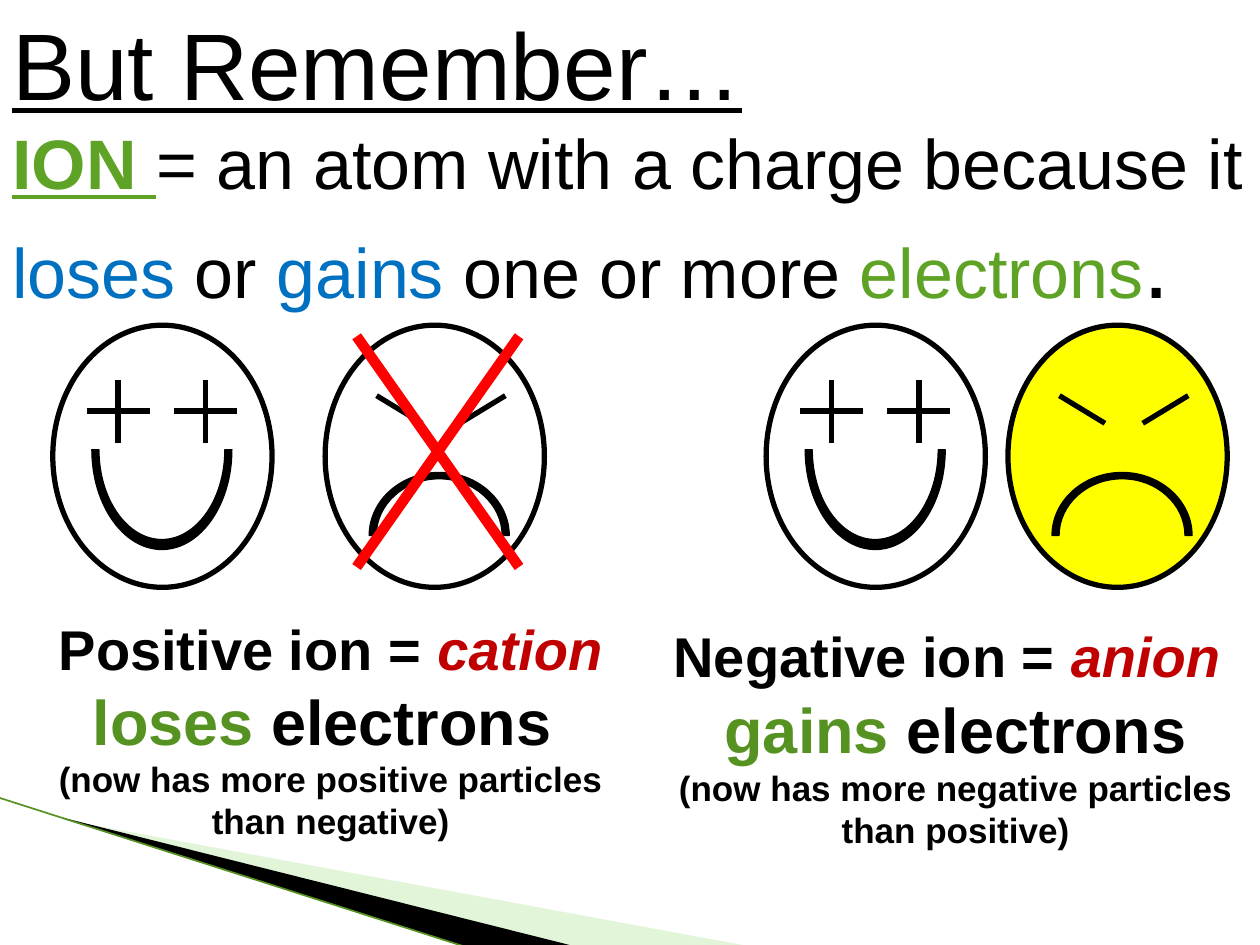
import lxml.etree
import pptx
import pptx.dml.color
import pptx.enum.shapes
import pptx.enum.text
import pptx.oxml.ns
import pptx.util

Pt = pptx.util.Pt
RGBColor = pptx.dml.color.RGBColor
qn = pptx.oxml.ns.qn

BLACK = RGBColor(0x00, 0x00, 0x00)
WHITE = RGBColor(0xFF, 0xFF, 0xFF)
YELLOW = RGBColor(0xFF, 0xFF, 0x00)
RED = RGBColor(0xFF, 0x00, 0x00)
DARK_RED = RGBColor(0xC0, 0x00, 0x00)
BLUE = RGBColor(0x00, 0x70, 0xC0)
GREEN = RGBColor(0x5F, 0xA3, 0x26)
DARK_GREEN = RGBColor(0x55, 0x92, 0x22)
PALE_GREEN = RGBColor(0xB8, 0xE7, 0xA1)

FACE_TOP, FACE_WIDTH, FACE_HEIGHT = 185.8, 125.3, 149.8
BEZIER = 0.55  # control point distance for a quarter ellipse


def add_line(shapes, start, end, color, width):
    line = shapes.add_connector(
        pptx.enum.shapes.MSO_CONNECTOR.STRAIGHT, *map(Pt, start + end))
    line.line.color.rgb = color
    line.line.width = Pt(width)
    lxml.etree.SubElement(line._element.spPr, qn("a:effectLst"))


def add_polygon(shapes, frame, points, color):
    """Fill an outline whose shape frame may differ from the outline's extent."""
    points = [tuple(map(Pt, point)) for point in points]
    builder = shapes.build_freeform(*points[0], scale=1.0)
    builder.add_line_segments(points[1:], close=True)
    polygon = builder.convert_to_shape()
    polygon.shadow.inherit = False
    polygon.fill.solid()
    polygon.fill.fore_color.rgb = color
    polygon.line.fill.background()

    left, top, width, height = map(Pt, frame)
    outline = polygon._element.spPr.find(".//" + qn("a:path"))
    for point in outline.iter(qn("a:pt")):
        point.set("x", str(int(point.get("x")) + polygon.left - left))
        point.set("y", str(int(point.get("y")) + polygon.top - top))
    outline.set("w", str(width))
    outline.set("h", str(height))
    polygon.left, polygon.top = left, top
    polygon.width, polygon.height = width, height
    return polygon


def half_ellipse(center_x, center_y, radius_x, radius_y):
    """Bezier points of the upper half, from left to right."""
    steps = [(-1, 0), (-1, -BEZIER), (-BEZIER, -1), (0, -1),
             (BEZIER, -1), (1, -BEZIER), (1, 0)]
    return [(center_x + x * radius_x, center_y + y * radius_y)
            for x, y in steps]


def add_mouth(shapes, center, outer, inner, rotation):
    (x, y), (radius_x, radius_y) = center, outer
    frame = (x - radius_x, y - radius_y, 2 * radius_x, 2 * radius_y)
    points = half_ellipse(*center, *inner) + half_ellipse(*center, *outer)[::-1]
    mouth = add_polygon(shapes, frame, points, BLACK)
    mouth.line.color.rgb = BLACK
    mouth.line.width = Pt(0.75)
    mouth.rotation = rotation

    segments = list(mouth._element.spPr.iter(qn("a:lnTo")))
    for first in (0, 3, 7, 10):
        curve = lxml.etree.Element(qn("a:cubicBezTo"))
        segments[first].addprevious(curve)
        for segment in segments[first:first + 3]:
            curve.append(segment[0])
            segment.getparent().remove(segment)


def add_head(page, left, color):
    """Start a face group with its head and return the group's shapes."""
    shapes = page.shapes.add_group_shape().shapes
    head = shapes.add_shape(
        pptx.enum.shapes.MSO_SHAPE.OVAL,
        Pt(left), Pt(FACE_TOP), Pt(FACE_WIDTH), Pt(FACE_HEIGHT))
    head.shadow.inherit = False
    head.fill.solid()
    head.fill.fore_color.rgb = color
    head.line.color.rgb = BLACK
    head.line.width = Pt(3)
    return shapes


def add_happy_face(page, left):
    shapes = add_head(page, left, WHITE)
    middle = left + 62.3
    add_mouth(shapes, (middle, 257), (40, 57), (36, 51.3), 180)
    eye_y, reach = 234.9, 18
    for eye_x in (middle - 25, middle + 25):
        add_line(shapes, (eye_x, eye_y - reach), (eye_x, eye_y + reach), BLACK, 3)
        add_line(shapes, (eye_x - reach, eye_y), (eye_x + reach, eye_y), BLACK, 3)


def add_sad_face(page, left, color):
    shapes = add_head(page, left, color)
    middle = left + 66.2
    for side in (-1, 1):
        add_line(shapes, (middle + side * 36.8, 226.1),
                 (middle + side * 10.8, 241.9), BLACK, 3)
    add_mouth(shapes, (left + 65.2, 306), (40, 36), (36, 32.4), 0)


def add_cross(page, left, top, right, bottom):
    shapes = page.shapes.add_group_shape().shapes
    add_line(shapes, (right, top), (left, bottom), RED, 6)
    add_line(shapes, (left, top), (right, bottom), RED, 6)


def add_text(page, position, paragraphs, align):
    """Each paragraph is a list of (text, size, color, styles) spans."""
    box = page.shapes.add_textbox(*map(Pt, position))
    frame = box.text_frame
    frame.word_wrap = True
    frame.auto_size = pptx.enum.text.MSO_AUTO_SIZE.SHAPE_TO_FIT_TEXT
    for index, spans in enumerate(paragraphs):
        para = frame.add_paragraph() if index else frame.paragraphs[0]
        para.alignment = align
        for text, size, color, styles in spans:
            span = para.add_run()
            span.text = text
            span.font.name = "Arial"
            span.font.size = Pt(size)
            span.font.color.rgb = color
            span.font.bold = "b" in styles
            span.font.italic = "i" in styles
            span.font.underline = "u" in styles


def add_corner_decoration(page):
    pale = add_polygon(
        page.shapes, (56.2, 393.8, 299.5, 113.8),
        [(36.1, 468.4), (424.4, 540), (324.8, 540), (36.1, 468)], PALE_GREEN)
    color = pale._element.spPr.find(qn("a:solidFill"))[0]
    lxml.etree.SubElement(color, qn("a:alpha"), val="40000")
    add_polygon(
        page.shapes, (-4.3, 455.8, 299.5, 66.2),
        [(35, 467), (325.5, 540), (264.3, 540.5), (35.4, 467.6)], BLACK)
    add_line(page.shapes, (-0.7, 455.8), (267.1, 541.4), DARK_GREEN, 0.95)


def add_definition(page):
    add_text(page, (0, 0, 720, 186.5), [
        [("But Remember…", 54, BLACK, "u")],
        [("ION ", 40, GREEN, "bu"),
         ("= an atom with a charge because it ", 40, BLACK, ""),
         ("loses", 40, BLUE, ""),
         (" or ", 40, BLACK, ""),
         ("gains", 40, BLUE, ""),
         (" one or more ", 40, BLACK, ""),
         ("electrons", 40, GREEN, ""),
         (".", 54, BLACK, "")],
    ], pptx.enum.text.PP_ALIGN.LEFT)


def add_ion_summary(page, position, title, change, note):
    """Each of title and change is a list of (text, size, color, styles)."""
    add_text(page, position, [title, change, [(note, 20, BLACK, "b")]],
             pptx.enum.text.PP_ALIGN.CENTER)


def main():
    deck = pptx.Presentation()
    deck.slide_width, deck.slide_height = Pt(720), Pt(540)
    page = deck.slides.add_slide(deck.slide_layouts[6])

    add_corner_decoration(page)
    add_definition(page)
    add_happy_face(page, 30.2)
    add_sad_face(page, 185.8, WHITE)
    add_happy_face(page, 437.8)
    add_sad_face(page, 576, YELLOW)
    add_cross(page, 203.8, 192.2, 296.6, 324)

    add_ion_summary(
        page, (12.2, 347.8, 353.5, 143.3),
        [("Positive ion = ", 32, BLACK, "b"), ("cation", 32, DARK_RED, "bi")],
        [("loses", 36, DARK_GREEN, "b"), (" electrons ", 36, BLACK, "b")],
        "(now has more positive particles than negative)")
    add_ion_summary(
        page, (372.2, 347.8, 347.8, 164.9),
        [("Negative ion = ", 32, BLACK, "b"), ("anion", 32, DARK_RED, "bi"),
         (" ", 36, BLACK, "b")],
        [("gains", 36, DARK_GREEN, "b"), (" electrons", 36, BLACK, "b")],
        "(now has more negative particles than positive)")

    deck.save("out.pptx")


if __name__ == "__main__":
    main()
